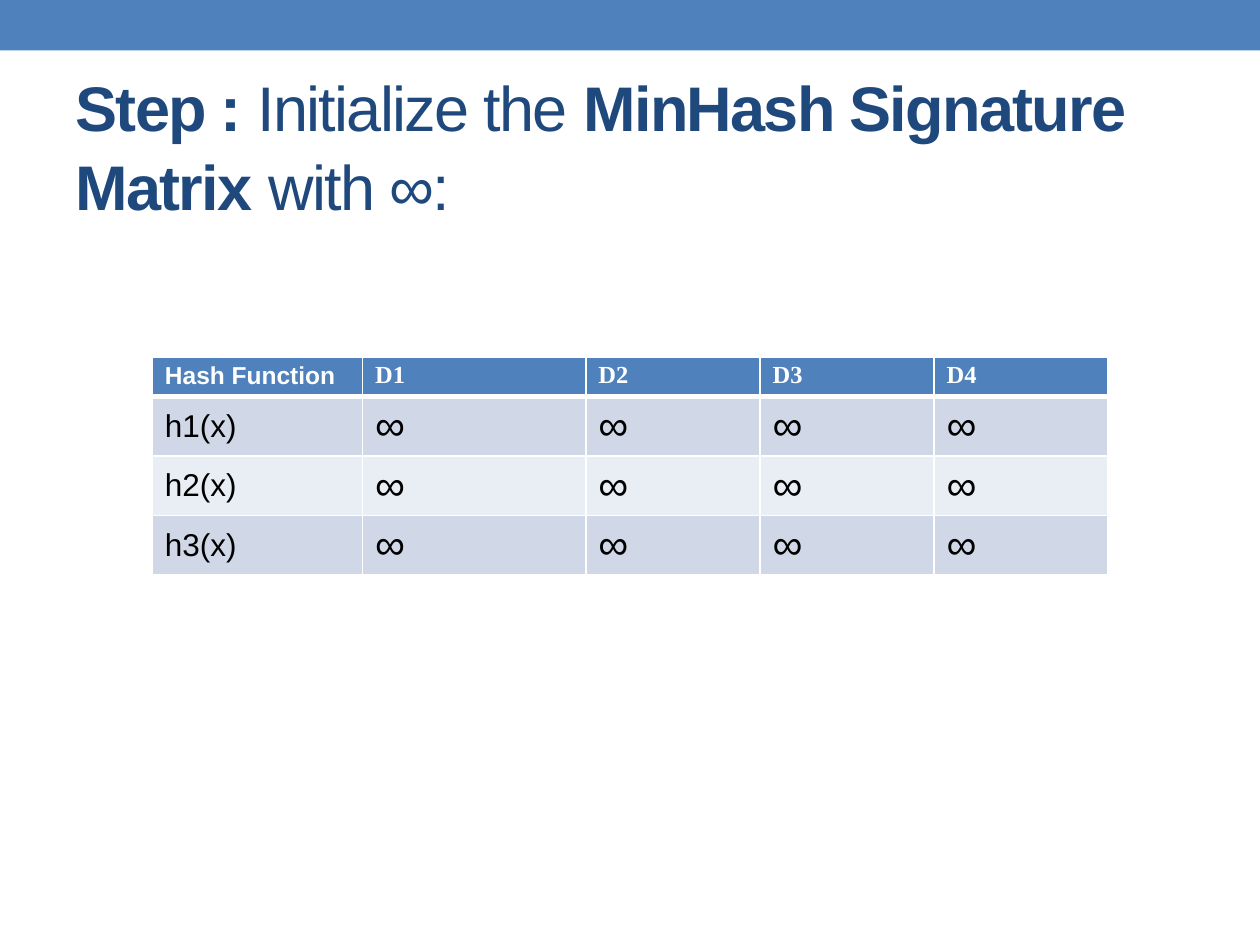
from lxml import etree
from pptx import Presentation
from pptx.dml.color import RGBColor
from pptx.enum.shapes import MSO_SHAPE
from pptx.enum.text import MSO_ANCHOR, MSO_AUTO_SIZE, PP_ALIGN
from pptx.oxml.ns import qn
from pptx.util import Cm, Pt

COLORS = {
    "accent": "4F81BD",
    "heading": "1F497D",
    "band_dark": "D0D8E8",
    "band_light": "E9EDF4",
    "white": "FFFFFF",
    "black": "000000",
}


def write(paragraph, text, size=18, font="Arial", color="black", bold=False, spacing=0):
    run = paragraph.add_run()
    run.text = text
    run.font.size = Pt(size)
    run.font.name = font
    run.font.bold = bold
    run.font.color.rgb = RGBColor.from_string(COLORS[color])
    if spacing:
        run.font._element.set("spc", str(spacing))


def set_borders(cell, bottom_width):
    properties = cell._tc.get_or_add_tcPr()
    widths = {"a:lnL": 1, "a:lnR": 1, "a:lnT": 1, "a:lnB": bottom_width}
    for position, (side, width) in enumerate(widths.items()):
        line = etree.Element(qn(side), w=str(Pt(width)))
        fill = etree.SubElement(line, qn("a:solidFill"))
        etree.SubElement(fill, qn("a:srgbClr"), val=COLORS["white"])
        properties.insert(position, line)


prs = Presentation()
prs.slide_width = Cm(25.4)
prs.slide_height = Cm(19.05)
slide = prs.slides.add_slide(prs.slide_layouts[5])

top_band = slide.shapes.add_shape(MSO_SHAPE.RECTANGLE, 0, 0, prs.slide_width, Cm(1.02))
top_band.shadow.inherit = False
top_band.fill.solid()
top_band.fill.fore_color.rgb = RGBColor.from_string(COLORS["accent"])
top_band.line.fill.background()

heading = slide.shapes.title
heading.left, heading.top = Cm(1.27), Cm(1.47)
heading.width, heading.height = Cm(22.86), Cm(2.74)
heading_frame = heading.text_frame
heading_frame.auto_size = MSO_AUTO_SIZE.NONE
heading_frame.word_wrap = True
heading_frame.vertical_anchor = MSO_ANCHOR.MIDDLE
heading_frame.margin_bottom = 0
heading_line = heading_frame.paragraphs[0]
heading_line.alignment = PP_ALIGN.LEFT
heading_line.line_spacing = 1.05
for text, bold in [
    ("Step :", True),
    (" Initialize the ", False),
    ("MinHash Signature Matrix", True),
    (" with ∞:", False),
]:
    write(heading_line, text, size=36, color="heading", bold=bold, spacing=-100)

column_widths = [4.24, 4.5, 3.51, 3.51, 3.51]
row_heights = [0.79, 1.2, 1.2, 1.2]
signature_rows = [["Hash Function", "D1", "D2", "D3", "D4"]]
signature_rows += [[f"h{number}(x)"] + ["∞"] * 4 for number in range(1, 4)]

signature_matrix = slide.shapes.add_table(
    len(row_heights), len(column_widths),
    Cm(3.07), Cm(7.2), Cm(sum(column_widths)), Cm(sum(row_heights)),
).table
for column, width in zip(signature_matrix.columns, column_widths):
    column.width = Cm(width)
for row, height in zip(signature_matrix.rows, row_heights):
    row.height = Cm(height)

for r, values in enumerate(signature_rows):
    is_header = r == 0
    fill_color = "accent" if is_header else "band_dark" if r % 2 else "band_light"
    for c, value in enumerate(values):
        cell = signature_matrix.cell(r, c)
        cell.margin_top = cell.margin_bottom = Cm(0.1)
        cell.vertical_anchor = MSO_ANCHOR.TOP if is_header else MSO_ANCHOR.MIDDLE
        cell.fill.solid()
        cell.fill.fore_color.rgb = RGBColor.from_string(COLORS[fill_color])
        set_borders(cell, 3 if is_header else 1)
        label = cell.text_frame.paragraphs[0]
        if is_header:
            font = "Times New Roman" if c else "Arial"
            write(label, value, size=14, font=font, color="white", bold=True)
        else:
            write(label, value, size=24 if c else 18)

prs.save("out.pptx")
